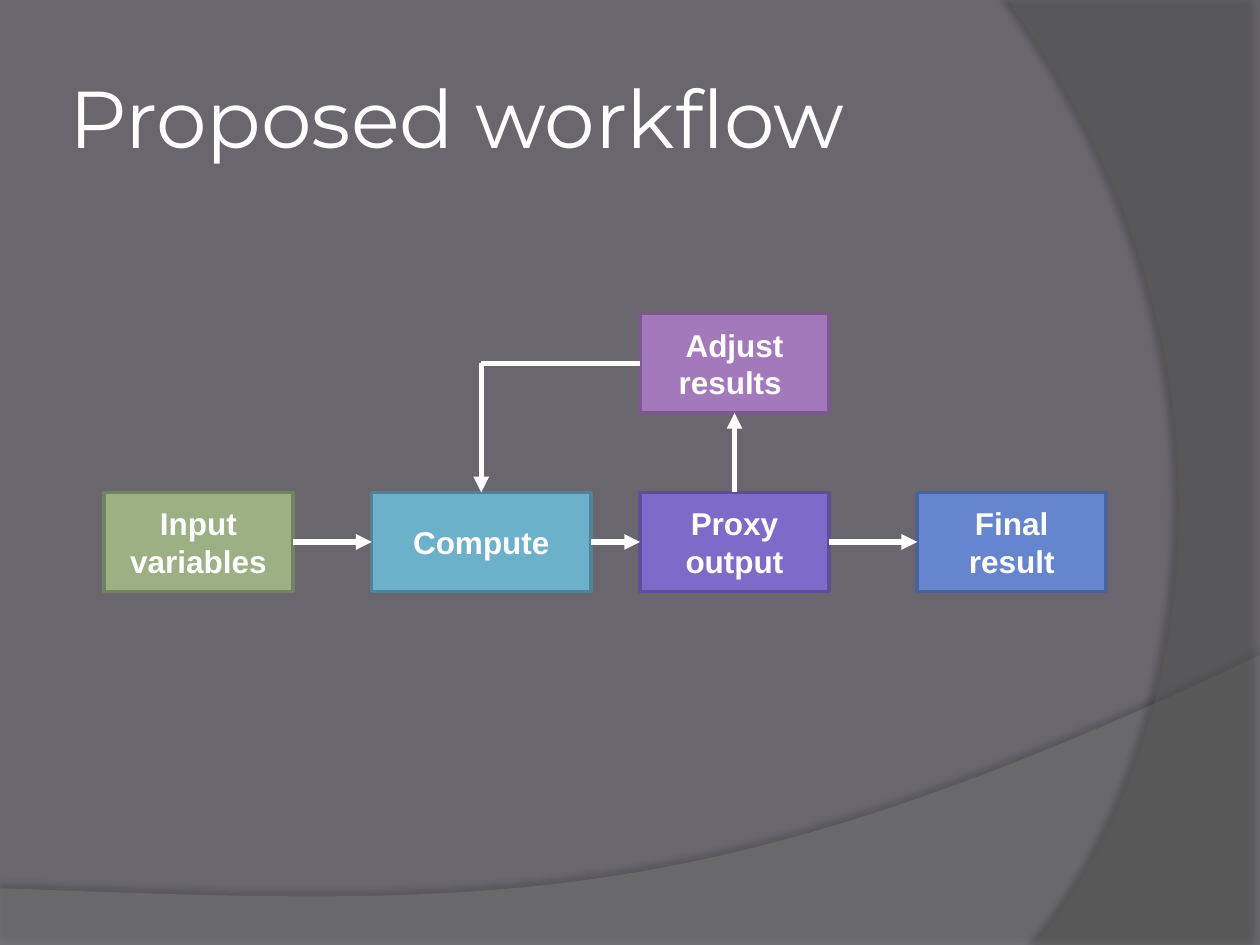
import pptx
import pptx.dml.color
import pptx.enum.shapes
import pptx.enum.text
import pptx.oxml
import pptx.oxml.ns
import pptx.util

WIDTH = pptx.util.Inches(10)
HEIGHT = pptx.util.Inches(7.5)
WHITE = "FFFFFF"
TOP, LEFT, BOTTOM, RIGHT = range(4)
BOX_WIDTH, BOX_HEIGHT = 15, 10.5
MAIN_ROW, FEEDBACK_ROW = 52.1, 33.2


def across(percent):
    """Turn a percentage of the slide's width into a length."""
    return pptx.util.Emu(round(WIDTH * percent / 100))


def down(percent):
    """Turn a percentage of the slide's height into a length."""
    return pptx.util.Emu(round(HEIGHT * percent / 100))


def colour(hex_code):
    """Return the RGB colour for a hex string."""
    return pptx.dml.color.RGBColor.from_string(hex_code)


def xml(tag, content="", **attributes):
    """Build one DrawingML element."""
    listed = "".join(f' {key}="{value}"' for key, value in attributes.items())
    namespace = pptx.oxml.ns.nsdecls("a")
    return pptx.oxml.parse_xml(f"<a:{tag} {namespace}{listed}>{content}</a:{tag}>")


def bezier(start, first, second, end, steps=48):
    """List the points of a cubic curve after its start."""
    points = []
    for step in range(1, steps + 1):
        t = step / steps
        weights = ((1 - t) ** 3, 3 * t * (1 - t) ** 2, 3 * t * t * (1 - t), t ** 3)
        corners = (start, first, second, end)
        points.append(tuple(sum(w * c[axis] for w, c in zip(weights, corners))
                            for axis in (0, 1)))
    return points


def add_swoosh(slide, points, fill, opacity, shade, blur, distance, angle):
    """Draw a translucent background outline with a soft shadow."""
    corners = [(across(x), down(y)) for x, y in points]
    builder = slide.shapes.build_freeform(*corners[0])
    builder.add_line_segments(corners[1:], close=True)
    swoosh = builder.convert_to_shape()
    swoosh.fill.solid()
    swoosh.fill.fore_color.rgb = colour(fill)
    swoosh.line.fill.background()
    swoosh.shadow.inherit = False
    properties = swoosh._element.spPr
    tint = properties.find(pptx.oxml.ns.qn("a:solidFill"))[0]
    tint.append(xml("alpha", val=opacity * 1000))
    properties.find(pptx.oxml.ns.qn("a:effectLst")).append(xml(
        "outerShdw",
        f'<a:srgbClr val="000000"><a:alpha val="{shade * 1000}"/></a:srgbClr>',
        blurRad=pptx.util.Pt(blur), dist=pptx.util.Pt(distance),
        dir=angle * 60000, algn="ctr", rotWithShape=0))


def add_run(paragraph, text, size, font, bold=False):
    """Add one white run to a paragraph."""
    run = paragraph.add_run()
    run.text = text
    run.font.size = pptx.util.Pt(size)
    run.font.name = font
    run.font.bold = bold
    run.font.color.rgb = colour(WHITE)


def add_title(slide, text):
    """Place the slide's heading."""
    title = slide.shapes.add_textbox(across(5), down(4), across(81.7), down(16.67))
    frame = title.text_frame
    frame.word_wrap = True
    frame.vertical_anchor = pptx.enum.text.MSO_ANCHOR.MIDDLE
    frame.margin_left = frame.margin_right = pptx.util.Inches(0.05)
    frame.margin_top = frame.margin_bottom = pptx.util.Inches(0.05)
    add_run(frame.paragraphs[0], text, 46, "Montserrat")


def add_stage(slide, lines, column, row, fill, border, width=BOX_WIDTH):
    """Draw one workflow box with a paragraph for each line."""
    stage = slide.shapes.add_shape(
        pptx.enum.shapes.MSO_SHAPE.RECTANGLE,
        across(column), down(row), across(width), down(BOX_HEIGHT))
    stage.shadow.inherit = False
    stage.fill.solid()
    stage.fill.fore_color.rgb = colour(fill)
    stage.line.color.rgb = colour(border)
    stage.line.width = pptx.util.Pt(2)
    frame = stage.text_frame
    frame.word_wrap = True
    frame.vertical_anchor = pptx.enum.text.MSO_ANCHOR.MIDDLE
    for index, line in enumerate(lines):
        paragraph = frame.add_paragraph() if index else frame.paragraphs[0]
        paragraph.alignment = pptx.enum.text.PP_ALIGN.CENTER
        add_run(paragraph, line, 18, "Arial", bold=True)
    return stage


def add_flow(slide, start, end, source=None, target=None, arrow=True):
    """Draw a white line, joined to a (stage, side) at either end if given."""
    flow = slide.shapes.add_connector(
        pptx.enum.shapes.MSO_CONNECTOR.STRAIGHT, *start, *end)
    if source:
        flow.begin_connect(*source)
    if target:
        flow.end_connect(*target)
    flow.line.color.rgb = colour(WHITE)
    flow.line.width = pptx.util.Pt(3)
    properties = flow._element.spPr
    if arrow:
        properties.find(pptx.oxml.ns.qn("a:ln")).append(xml("tailEnd", type="triangle"))
    properties.append(xml("effectLst"))


def side_point(stage, side):
    """Return the middle of a stage's side."""
    shares = {TOP: (0.5, 0), LEFT: (0, 0.5), BOTTOM: (0.5, 1), RIGHT: (1, 0.5)}
    x, y = shares[side]
    return round(stage.left + stage.width * x), round(stage.top + stage.height * y)


def link(slide, source, target):
    """Join two (stage, side) pairs with an arrow."""
    add_flow(slide, side_point(*source), side_point(*target), source, target)


def main():
    """Build and save the workflow slide."""
    deck = pptx.Presentation()
    deck.slide_width, deck.slide_height = WIDTH, HEIGHT
    slide = deck.slides.add_slide(deck.slide_layouts[6])
    slide.background.fill.solid()
    slide.background.fill.fore_color.rgb = colour("69676D")

    hill = bezier((100, 69.33), (55.9, 97.2), (39.1, 95.87), (0, 94))
    add_swoosh(slide, [(0, 94), (0, 100), (100, 100), (100, 69.33)] + hill[:-1],
               "7F7F7F", 45, 35, 4, 3.5, 270)
    edge = bezier((82.1, 100), (93.5, 82.53), (101.8, 40), (80, 0))
    add_swoosh(slide, [(100, 0), (100, 100), (82.1, 100)] + edge,
               "5E5E5E", 40, 45, 4, 4, 180)

    add_title(slide, "Proposed workflow")
    inputs = add_stage(slide, ["Input variables"], 8.25, MAIN_ROW, "9CB084", "738262")
    compute = add_stage(slide, ["Compute"], 29.5, MAIN_ROW, "6BB1C9", "4F8395", 17.4)
    adjust = add_stage(slide, ["Adjust", "results "], 50.8, FEEDBACK_ROW,
                       "A379BB", "795A8A")
    proxy = add_stage(slide, ["Proxy", "output"], 50.8, MAIN_ROW, "7E6BC9", "5D4F95")
    final = add_stage(slide, ["Final", "result"], 72.8, MAIN_ROW, "6585CF", "4B6299")

    for before, after in ((inputs, compute), (compute, proxy), (proxy, final)):
        link(slide, (before, RIGHT), (after, LEFT))
    link(slide, (proxy, TOP), (adjust, BOTTOM))

    compute_top, adjust_left = side_point(compute, TOP), side_point(adjust, LEFT)
    bend = compute_top[0], adjust_left[1]
    add_flow(slide, bend, compute_top, target=(compute, TOP))
    add_flow(slide, bend, adjust_left, target=(adjust, LEFT), arrow=False)
    deck.save("out.pptx")


if __name__ == "__main__":
    main()
